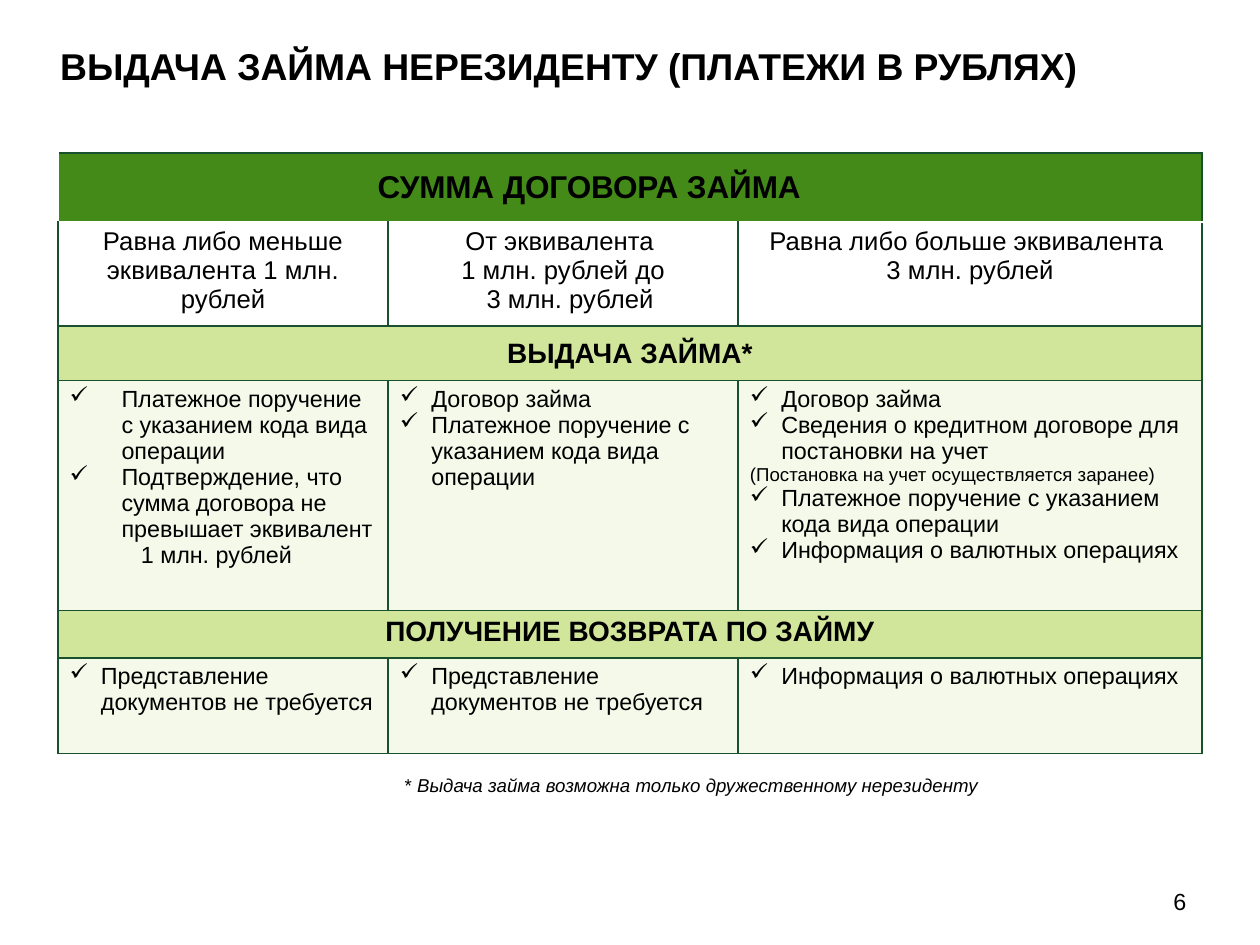
from dataclasses import dataclass

from lxml.etree import SubElement
from pptx import Presentation
from pptx.dml.color import RGBColor
from pptx.enum.text import MSO_ANCHOR, PP_ALIGN
from pptx.oxml.ns import qn
from pptx.util import Pt


@dataclass(frozen=True)
class Theme:
    font: str = "Arial"
    text: str = "000000"
    white: str = "FFFFFF"
    border: str = "19502E"
    header: str = "448A18"
    band: str = "A6CE39"
    body: str = "EDF5D7"
    title_size: float = 16
    header_size: float = 13.5
    band_size: float = 12
    amount_size: float = 11
    body_size: float = 10
    small_size: float = 8


T = Theme()
COLS = [141.6, 150, 198.8]
ROWS = [29.6, 44.6, 23.4, 98.6, 20.2, 41]

AMOUNTS = [
    ["Равна либо меньше эквивалента 1 млн. рублей"],
    ["От эквивалента ", "1 млн. рублей до", "3 млн. рублей"],
    ["Равна либо больше эквивалента ", "3 млн. рублей"],
]
ORDER = "Платежное поручение с указанием кода вида операции"
CONTRACT = "Договор займа"
INFO = "Информация о валютных операциях"
NO_DOCS = "Представление документов не требуется"
CONFIRM = "Подтверждение, что сумма договора не превышает эквивалент"
REGISTER = "Сведения о кредитном договоре для постановки на учет"
NOTE = "(Постановка на учет осуществляется заранее)"


def add_run(p, text, size, bold=False, italic=False):
    r = p.add_run()
    r.text = text
    f = r.font
    f.name, f.size, f.bold, f.italic = T.font, Pt(size), bold, italic
    f.color.rgb = RGBColor.from_string(T.text)


def next_paragraph(tf):
    """Return the unused first paragraph, or a new one."""
    p = tf.paragraphs[0]
    return tf.add_paragraph() if p.runs else p


def add_line(tf, text, size, bold=False, align=PP_ALIGN.LEFT, left=0):
    p = next_paragraph(tf)
    p.alignment = align
    p._p.get_or_add_pPr().set("marL", str(Pt(left)))
    add_run(p, text, size, bold)


def add_checks(tf, items, indent=13.5):
    for item in items:
        p = next_paragraph(tf)
        pPr = p._p.get_or_add_pPr()
        pPr.set("marL", str(Pt(indent)))
        pPr.set("indent", str(-Pt(indent)))
        SubElement(pPr, qn("a:buChar"), char="✓")
        add_run(p, item, T.body_size)


def add_text(s, left, top, width, height, anchor=MSO_ANCHOR.TOP):
    tf = s.shapes.add_textbox(Pt(left), Pt(top), Pt(width), Pt(height)).text_frame
    tf.word_wrap = True
    tf.vertical_anchor = anchor
    return tf


def style_cell(cell, fill=None, alpha=None, white_sides=""):
    cell.margin_left = cell.margin_right = Pt(5)
    cell.margin_top = cell.margin_bottom = Pt(2.4)
    tcPr = cell._tc.get_or_add_tcPr()
    for side in "LRTB":
        ln = SubElement(tcPr, qn("a:ln" + side), w=str(Pt(0.75)))
        color = T.white if side in white_sides else T.border
        SubElement(SubElement(ln, qn("a:solidFill")), qn("a:srgbClr"), val=color)
    if fill is None:
        cell.fill.background()
        return
    cell.fill.solid()
    cell.fill.fore_color.rgb = RGBColor.from_string(fill)
    if alpha:
        clr = tcPr.find(qn("a:solidFill")).find(qn("a:srgbClr"))
        SubElement(clr, qn("a:alpha"), val=str(alpha * 1000))


def add_band(table, row, text, size, anchor=MSO_ANCHOR.MIDDLE):
    cell = table.cell(row, 0)
    cell.merge(table.cell(row, len(COLS) - 1))
    cell.vertical_anchor = anchor
    add_line(cell.text_frame, text, size, True, PP_ALIGN.CENTER)
    return cell


def add_loan_table(s):
    frame = s.shapes.add_table(len(ROWS), len(COLS), Pt(24.8), Pt(65.6),
                               Pt(sum(COLS)), Pt(sum(ROWS)))
    table = frame.table
    table.first_row = table.horz_banding = False
    for col, width in zip(table.columns, COLS):
        col.width = Pt(width)
    for row, height in zip(table.rows, ROWS):
        row.height = Pt(height)

    # Fills and borders, one style per row
    header = dict(fill=T.header, white_sides="LB")
    amounts = dict(white_sides="T")
    band = dict(fill=T.band, alpha=50)
    body = dict(fill=T.body, alpha=50)
    for row, style in zip(table.rows, [header, amounts, band, body, band, body]):
        for cell in row.cells:
            style_cell(cell, **style)

    # Full-width headings
    head = add_band(table, 0, "СУММА ДОГОВОРА ЗАЙМА", T.header_size)
    head.margin_right = Pt(40)
    add_band(table, 2, "ВЫДАЧА ЗАЙМА*", T.band_size)
    add_band(table, 4, "ПОЛУЧЕНИЕ ВОЗВРАТА ПО ЗАЙМУ", T.band_size, MSO_ANCHOR.TOP)

    # Contract amounts
    for i, lines in enumerate(AMOUNTS):
        for j, line in enumerate(lines):
            add_line(table.cell(1, i).text_frame, line, T.amount_size,
                     align=PP_ALIGN.CENTER, left=6 if j == 2 else 0)

    # Documents for issuing the loan
    small, medium, large = [table.cell(3, i).text_frame for i in range(3)]
    add_checks(small, [ORDER, CONFIRM], indent=22.3)
    add_line(small, "1 млн. рублей", T.body_size, left=30.6)
    add_checks(medium, [CONTRACT, ORDER])
    add_checks(large, [CONTRACT, REGISTER])
    add_line(large, NOTE, T.small_size)
    add_checks(large, [ORDER, INFO])

    # Documents for repayment
    for i, item in enumerate([NO_DOCS, NO_DOCS, INFO]):
        add_checks(table.cell(5, i).text_frame, [item])


def main():
    prs = Presentation()
    prs.slide_width, prs.slide_height = Pt(540), Pt(405)
    s = prs.slides.add_slide(prs.slide_layouts[6])

    # Title
    tf = add_text(s, 18.7, 12.2, 497, 29.5, MSO_ANCHOR.BOTTOM)
    add_line(tf, "ВЫДАЧА ЗАЙМА НЕРЕЗИДЕНТУ (ПЛАТЕЖИ В РУБЛЯХ)", T.title_size, True)
    tf.paragraphs[0].line_spacing = 0.9

    add_loan_table(s)

    # Footnote
    p = add_text(s, 166.3, 328.3, 360, 17.3).paragraphs[0]
    add_run(p, "* ", T.small_size)
    add_run(p, "Выдача займа возможна только дружественному нерезиденту",
            T.small_size, italic=True)

    # Page number
    tf = add_text(s, 460, 375.5, 55.5, 21.6, MSO_ANCHOR.MIDDLE)
    add_line(tf, "6", T.body_size, align=PP_ALIGN.RIGHT)

    prs.save("out.pptx")


if __name__ == "__main__":
    main()
